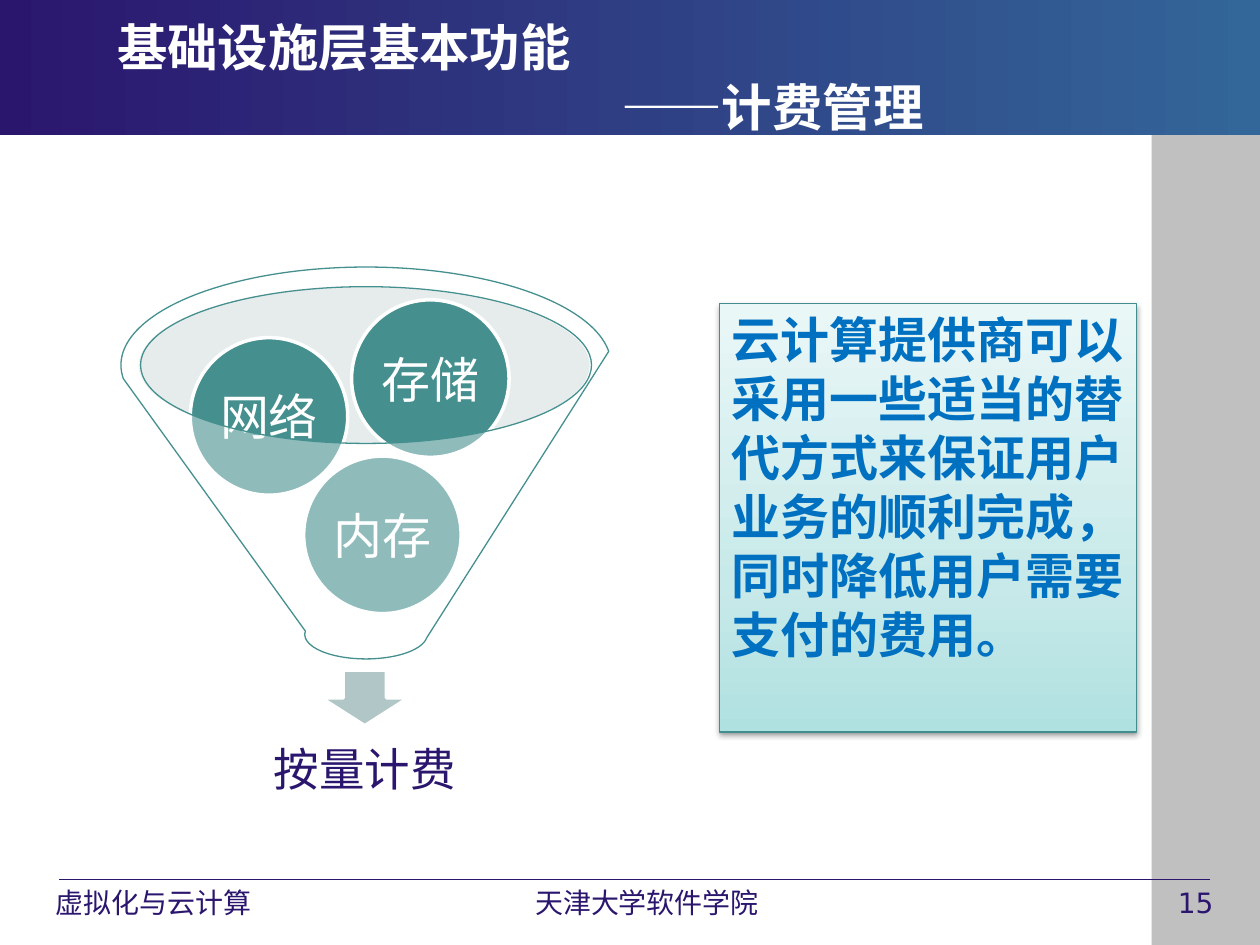
"""Build the slide on metered billing in the cloud infrastructure layer."""
from copy import deepcopy

from lxml.etree import SubElement
from pptx import Presentation
from pptx.dml.color import RGBColor
from pptx.enum.shapes import MSO_CONNECTOR, MSO_SHAPE
from pptx.enum.text import MSO_ANCHOR as ANCHOR, MSO_AUTO_SIZE, PP_ALIGN as ALIGN
from pptx.oxml.ns import qn
from pptx.util import Inches, Pt

FONT = "DejaVu Sans"
NAVY, TEAL, WHITE = "2B166E", "458F8F", "FFFFFF"
rgb = RGBColor.from_string

presentation = Presentation()
presentation.slide_width, presentation.slide_height = Inches(10), Inches(7.5)
column, row = presentation.slide_width / 100, presentation.slide_height / 100
slide = presentation.slides.add_slide(presentation.slide_layouts[5])
shapes = slide.shapes


def draw(preset, left, top, width, height, stops, line=None, weight=0.75, opacity=100, angle=0):
    """Add a preset shape placed in percent of the slide, filled with one or more colours."""
    shape = shapes.add_shape(preset, int(left * column), int(top * row),
                             int(width * column), int(height * row))
    shape.shadow.inherit = False
    if len(stops) == 1:
        shape.fill.solid()
        shape.fill.fore_color.rgb = rgb(stops[0][1])
        if opacity < 100:
            colour = shape.fill._xPr.find(qn("a:solidFill"))[0]
            SubElement(colour, qn("a:alpha")).set("val", str(opacity * 1000))
    else:
        shape.fill.gradient()
        shape.fill.gradient_angle = angle
        stop_list = shape.fill._xPr.find(qn("a:gradFill")).find(qn("a:gsLst"))
        while len(stop_list) < len(stops):
            stop_list.append(deepcopy(stop_list[0]))
        for stop, (position, colour) in zip(shape.fill.gradient_stops, stops):
            stop.position, stop.color.rgb = position / 100, rgb(colour)
    if line:
        shape.line.color.rgb, shape.line.width = rgb(line), Pt(weight)
    else:
        shape.line.fill.background()
    return shape


def write(shape, text, size, colour, align=ALIGN.LEFT, anchor=ANCHOR.TOP, bold=False, wrap=True):
    """Fill a shape with text in one format."""
    frame = shape.text_frame
    frame.text = text
    frame.word_wrap, frame.auto_size, frame.vertical_anchor = wrap, MSO_AUTO_SIZE.NONE, anchor
    for paragraph in frame.paragraphs:
        paragraph.alignment = align
        for run in paragraph.runs:
            run.font.name, run.font.size, run.font.bold = FONT, Pt(size), bold
            run.font.color.rgb = rgb(colour)


draw(MSO_SHAPE.RECTANGLE, 91.4, 14.27, 8.6, 85.73, [(0, "C0C0C0")])
rule = shapes.add_connector(MSO_CONNECTOR.STRAIGHT, int(4.7 * column), int(93.07 * row),
                            int(96 * column), int(93.07 * row))
rule.line.color.rgb, rule.line.width = rgb(NAVY), Pt(0.75)
SubElement(rule._element.spPr, qn("a:effectLst"))
draw(MSO_SHAPE.RECTANGLE, 0, 0, 100, 14.27, [(0, NAVY), (100, "336699")])

title = shapes.title
title.left, title.top = int(8.3 * column), int(1.73 * row)
title.width, title.height = int(85 * column), int(12.67 * row)
write(title, "基础设施层基本功能\n——计费管理", 28.8, WHITE, anchor=ANCHOR.MIDDLE, bold=True)
subtitle = title.text_frame.paragraphs[1]._p.get_or_add_pPr()
subtitle.set("marL", str(int(40 * column)))
subtitle.set("indent", "0")
shapes._spTree.append(title._element)

draw(MSO_SHAPE.OVAL, 11, 30.4, 35.8, 16.53, [(0, "C1D1D1")], opacity=40)
draw(MSO_SHAPE.DOWN_ARROW, 25.5, 70.93, 6.9, 5.87, [(0, "B1C6C6")], WHITE, 2)
for resource, left, top in [("内存", 24.1, 48.27), ("网络", 15.1, 35.73), ("存储", 27.9, 31.73)]:
    circle = draw(MSO_SHAPE.OVAL, left, top, 12.5, 16.67, [(0, TEAL)], WHITE, 2)
    write(circle, resource, 28, WHITE, ALIGN.CENTER, ANCHOR.MIDDLE, wrap=False)
draw(MSO_SHAPE.FUNNEL, 9.6, 28.27, 38.9, 41.47, [(0, WHITE)], TEAL, opacity=40)

for text, left, top, width, height, size, align, anchor in [
    ("按量计费", 12.3, 75.73, 33.3, 11.07, 26, ALIGN.CENTER, ANCHOR.MIDDLE),
    ("虚拟化与云计算", 2.5, 93.07, 19.4, 4.67, 16, ALIGN.CENTER, ANCHOR.TOP),
    ("天津大学软件学院", 40.1, 93.07, 22.5, 4.67, 16, ALIGN.CENTER, ANCHOR.TOP),
    ("15", 92.5, 93.07, 7.1, 4.67, 16, ALIGN.LEFT, ANCHOR.TOP),
]:
    label = shapes.add_textbox(int(left * column), int(top * row),
                               int(width * column), int(height * row))
    write(label, text, size, NAVY, align, anchor)

panel = draw(MSO_SHAPE.RECTANGLE, 57.1, 32.13, 33.1, 45.33,
             [(0, "B0E1E1"), (35, "C8E9E9"), (100, "EAF7F7")], "428E8E", angle=90)
write(panel, "云计算提供商可以采用一些适当的替代方式来保证用户业务的顺利完成，"
      "同时降低用户需要支付的费用。", 28, "0070C0", bold=True)
shadow = SubElement(panel._element.spPr.find(qn("a:effectLst")), qn("a:outerShdw"),
                    blurRad=str(Pt(3.1)), dist=str(Pt(1.6)), dir="5400000", rotWithShape="0")
shadow_colour = SubElement(shadow, qn("a:srgbClr"), val="000000")
SubElement(shadow_colour, qn("a:alpha"), val="38000")

presentation.save("out.pptx")
